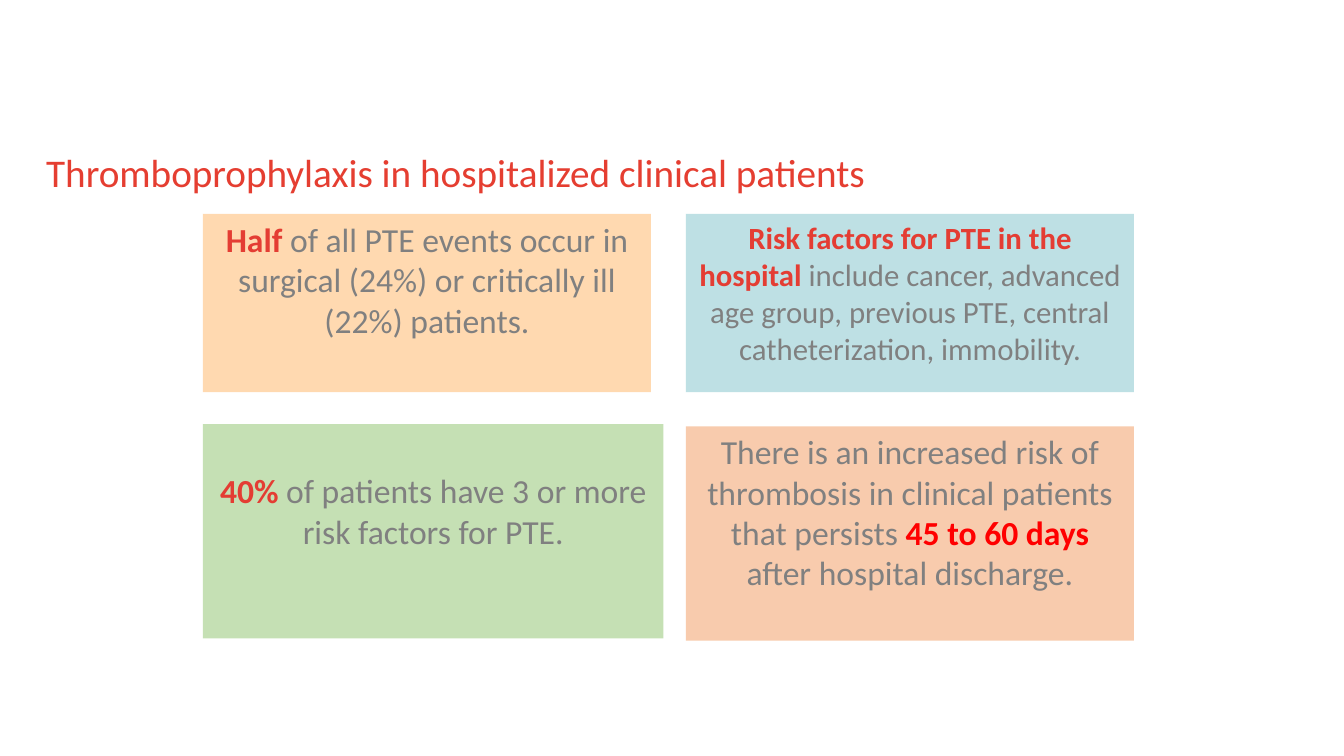
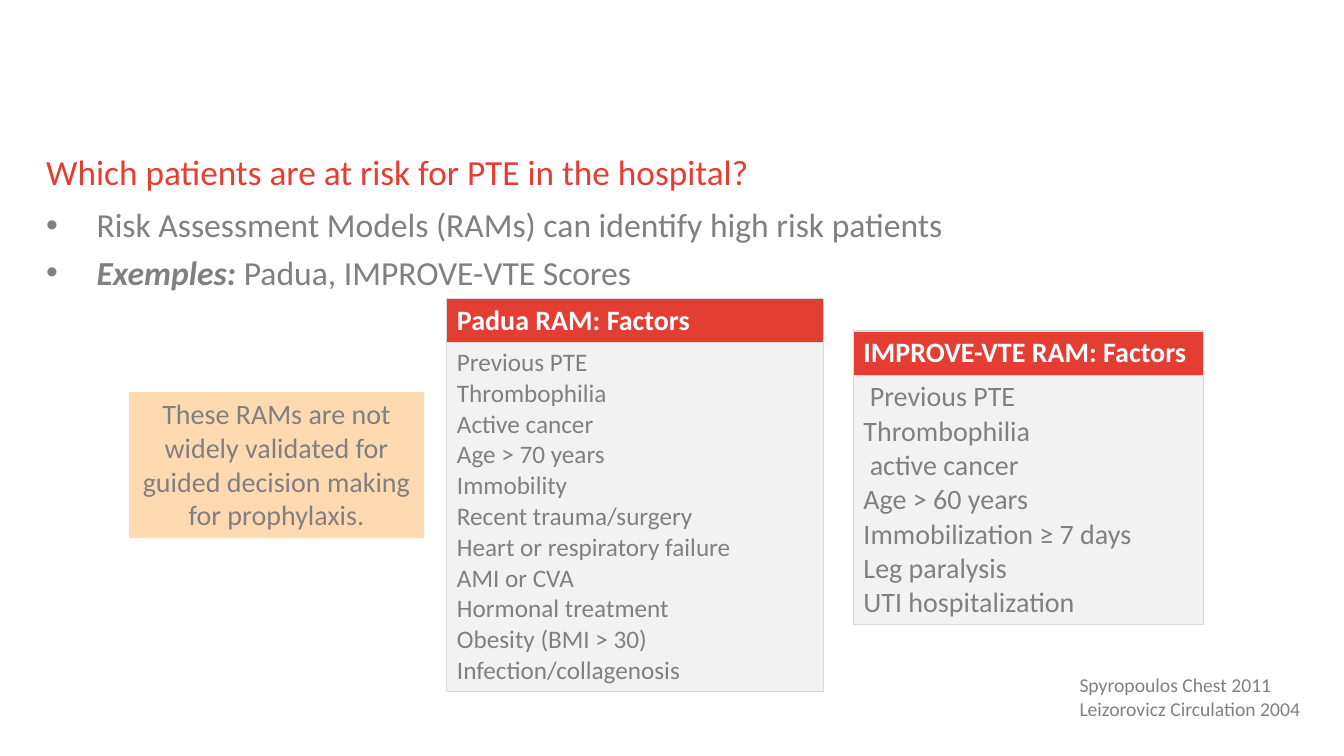
from lxml import etree
from pptx import Presentation
from pptx.dml.color import RGBColor
from pptx.enum.shapes import MSO_SHAPE
from pptx.enum.text import MSO_ANCHOR, MSO_AUTO_SIZE, PP_ALIGN
from pptx.oxml.ns import qn
from pptx.util import Pt

RECTANGLE = MSO_SHAPE.RECTANGLE
TOP, MIDDLE = MSO_ANCHOR.TOP, MSO_ANCHOR.MIDDLE
LEFT, CENTER = PP_ALIGN.LEFT, PP_ALIGN.CENTER
NO_AUTOFIT = MSO_AUTO_SIZE.NONE

FONT = "Calibri"
TITLE_RED, RED, BRIGHT_RED = "E53E31", "E43D33", "FF0000"
GRAY, WHITE, PALE, BORDER = "808080", "FFFFFF", "F2F2F2", "D9D9D9"
ORANGE, BLUE, GREEN, PEACH = "FFD9B0", "BEE0E4", "C5E0B4", "F8CBAD"
MARGIN, CONTENT_WIDTH = 33, 864
INSET_X, INSET_Y = 7.2, 3.6

BOLD = {"bold": True}
BOLD_ITALIC = {"bold": True, "italic": True}
BOLD_RED = {"bold": True, "color": RED}
BOLD_BRIGHT = {"bold": True, "color": BRIGHT_RED}

FACTS_TITLE = ("Thromboprophylaxis in hospitalized clinical patients", 28)
FACTS = [
    {"frame": (145, 152.8, 320, 127.3), "fill": ORANGE, "size": 24,
     "spans": [("Half ", BOLD_RED),
               ("of all PTE events occur in surgical (24%) or critically ill (22%) patients.", {})]},
    {"frame": (490, 152.8, 320, 127.3), "fill": BLUE, "size": 22,
     "spans": [("Risk factors for PTE in the hospital ", BOLD_RED),
               ("include cancer, advanced age group, previous PTE, "
                "central catheterization, immobility.", {})]},
    {"frame": (145, 303, 329, 153), "fill": GREEN, "size": 24, "inset_top": 33,
     "spans": [("40% ", BOLD_RED), ("of patients have 3 or more risk factors for PTE.", {})]},
    {"frame": (490, 304.6, 320, 153), "fill": PEACH, "size": 24,
     "spans": [("There is an increased risk of thrombosis in clinical patients that persists ", {}),
               ("45 to 60 days ", BOLD_BRIGHT),
               ("after hospital discharge.", {})]},
]

RISK_TITLE = ("Which patients are at risk for PTE in the hospital?", 25.2)
BULLETS = [
    [("Risk Assessment Models (RAMs) can identify high risk patients", {})],
    [("Exemples:", BOLD_ITALIC), (" Padua, IMPROVE-VTE Scores", {})],
]
SCORES = [
    {"frame": (319.2, 213.2, 269, 280.5), "size": 18, "header": "Padua RAM: Factors",
     "factors": ["Previous PTE", "Thrombophilia", "Active cancer", "Age > 70 years", "Immobility",
                 "Recent trauma/surgery", "Heart or respiratory failure", "AMI or CVA",
                 "Hormonal treatment", "Obesity (BMI > 30)", "Infection/collagenosis"]},
    {"frame": (609.6, 236.4, 250, 209.6), "size": 20, "header": "IMPROVE-VTE RAM: Factors",
     "factors": [" Previous PTE", "Thrombophilia", " active cancer", "Age > 60 years",
                 "Immobilization ≥ 7 days", "Leg paralysis", "UTI hospitalization"]},
]
HEADER_HEIGHT = 31.6
NOTE = {"frame": (92, 280, 211, 104.4), "fill": ORANGE, "size": 20,
        "spans": [("These RAMs are not widely validated for guided decision making for prophylaxis.", {})]}
SOURCES = [[("Spyropoulos Chest 2011", {})], [("Leizorovicz Circulation 2004", {})]]


def rgb(color):
    return RGBColor.from_string(color)


def points(values):
    return [Pt(value) for value in values]


def set_fill(target, color):
    target.fill.solid()
    target.fill.fore_color.rgb = rgb(color)


def set_font(font, size, color, bold=False):
    font.name, font.size, font.bold = FONT, Pt(size), bold
    font.color.rgb = rgb(color)


def set_insets(frame, left, top, right, bottom):
    frame.margin_left, frame.margin_top, frame.margin_right, frame.margin_bottom = points(
        (left, top, right, bottom))


def add_bullet(para, indent):
    properties = para._p.get_or_add_pPr()
    properties.set("marL", str(Pt(indent)))
    properties.set("indent", str(-Pt(indent)))
    font = etree.SubElement(properties, qn("a:buFont"))
    font.set("typeface", "Arial")
    etree.SubElement(properties, qn("a:buChar")).set("char", "•")


def write(frame, paragraphs, size, color=GRAY, align=LEFT, bold=False, bullet_indent=0, gap=0):
    frame.word_wrap = True
    for index, spans in enumerate(paragraphs):
        para = frame.add_paragraph() if index else frame.paragraphs[0]
        para.alignment = align
        if index and gap:
            para.space_before = Pt(gap)
        if bullet_indent:
            add_bullet(para, bullet_indent)
        set_font(para.font, size, color, bold)
        for text, style in spans:
            span = para.add_run()
            span.text = text
            set_font(span.font, size, style.get("color", color), style.get("bold", bold))
            if style.get("italic"):
                span.font.italic = True


def add_page(deck, title, size):
    page = deck.slides.add_slide(deck.slide_layouts[5])
    heading = page.shapes.title
    heading.left, heading.top, heading.width, heading.height = points((MARGIN, 106, CONTENT_WIDTH, 33))
    frame = heading.text_frame
    frame.auto_size = NO_AUTOFIT
    frame.vertical_anchor = MIDDLE
    set_insets(frame, 0, 0, 0, 0)
    write(frame, [[(title, {})]], size, TITLE_RED)
    return page


def add_panel(page, panel):
    box = page.shapes.add_shape(RECTANGLE, *points(panel["frame"]))
    box.shadow.inherit = False
    set_fill(box, panel["fill"])
    box.line.fill.background()
    frame = box.text_frame
    frame.vertical_anchor = TOP
    set_insets(frame, INSET_X, panel.get("inset_top", INSET_Y), INSET_X, INSET_Y)
    write(frame, [panel["spans"]], panel["size"], align=CENTER)


def add_text(page, frame, paragraphs, size, insets=(INSET_X, INSET_Y, INSET_X, INSET_Y), **style):
    box = page.shapes.add_textbox(*points(frame))
    set_insets(box.text_frame, *insets)
    write(box.text_frame, paragraphs, size, **style)


def set_borders(cell):
    properties = cell._tc.get_or_add_tcPr()
    for index, side in enumerate(("lnL", "lnR", "lnT", "lnB")):
        line = etree.Element(qn("a:" + side), w=str(Pt(1)))
        fill = etree.SubElement(line, qn("a:solidFill"))
        etree.SubElement(fill, qn("a:srgbClr")).set("val", BORDER)
        properties.insert(index, line)


def add_score(page, score):
    table = page.shapes.add_table(2, 1, *points(score["frame"])).table
    height = score["frame"][3]
    rows = [
        (HEADER_HEIGHT, RED, [score["header"]], 20, WHITE, True),
        (height - HEADER_HEIGHT, PALE, score["factors"], score["size"], GRAY, False),
    ]
    for index, (row_height, fill, lines, size, color, bold) in enumerate(rows):
        table.rows[index].height = Pt(row_height)
        cell = table.cell(index, 0)
        set_fill(cell, fill)
        set_borders(cell)
        write(cell.text_frame, [[(line, {})] for line in lines], size, color, bold=bold)


def main():
    deck = Presentation()
    deck.slide_width, deck.slide_height = Pt(960), Pt(540)

    page = add_page(deck, *FACTS_TITLE)
    for fact in FACTS:
        add_panel(page, fact)

    page = add_page(deck, *RISK_TITLE)
    add_text(page, (MARGIN, 146, CONTENT_WIDTH, 64), BULLETS, 24,
             insets=(0, 0, 0, 0), bullet_indent=36, gap=4.8)
    for score in SCORES:
        add_score(page, score)
    add_panel(page, NOTE)
    add_text(page, (764, 477.4, 179, 41), SOURCES, 14)

    deck.save("out.pptx")


if __name__ == "__main__":
    main()
